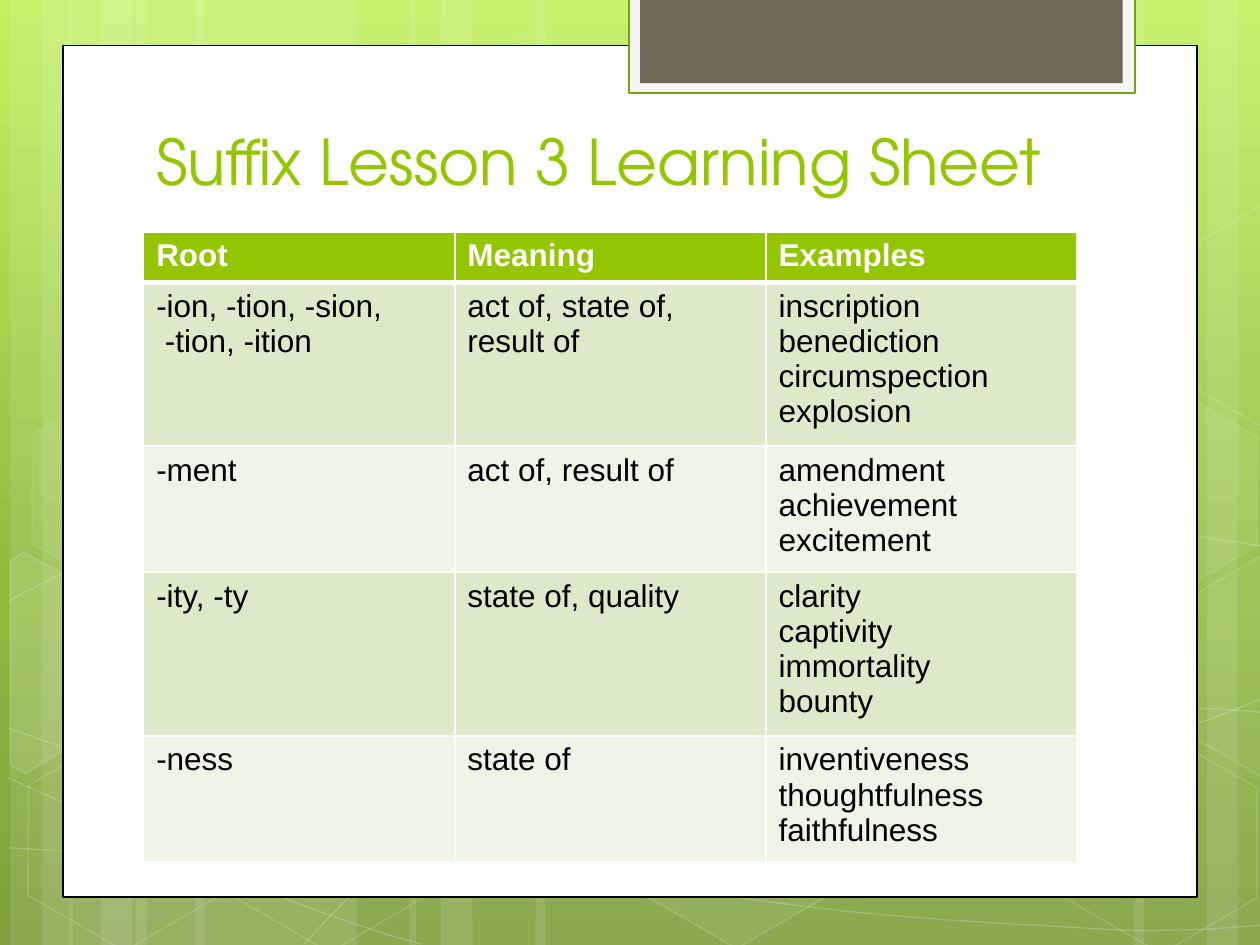
from copy import deepcopy
from typing import NamedTuple

from lxml import etree
from pptx import Presentation
from pptx.dml.color import RGBColor
from pptx.enum.shapes import MSO_SHAPE
from pptx.enum.text import MSO_ANCHOR
from pptx.oxml.ns import qn
from pptx.util import Inches, Pt

RECTANGLE, HEXAGON = MSO_SHAPE.RECTANGLE, MSO_SHAPE.HEXAGON
BOTTOM, TOP = MSO_ANCHOR.BOTTOM, MSO_ANCHOR.TOP

# The slide is a grid of 10 columns by 7.5 rows of square units.
COLUMNS, ROWS = 10, 7.5
UNIT = Inches(1)

WHITE, BLACK, LIME = "FFFFFF", "000000", "94C600"
BANDS = ("DCEACA", "EEF5E6")
BACKDROP = ((0, "C1F15E"), (0.62, "90BA3F"), (1, "7FA03E"))
TITLE_FONT, BODY_FONT = "TeX Gyre Adventor", "Arial"


class Box(NamedTuple):
    left: float
    top: float
    width: float
    height: float


class Paint(NamedTuple):
    color: str
    opacity: int = 100
    width: float = 0.75


class Hexagon(NamedTuple):
    left: float
    top: float
    fill_opacity: int
    line_opacity: int


class Lesson(NamedTuple):
    roots: str
    meaning: str
    examples: str


STRIPES = ((1.08, 1.75), (0.08, 0.5), (0.33, 0.83), (1.55, 1.75),
           (0.55, 0.5), (0.8, 0.83), (7.33, 1.75), (9.58, 0.5),
           (9, 0.83), (4.25, 3.08), (3.25, 0.5), (3.5, 0.83))

# Each wave is a start point followed by three points per Bezier segment.
WAVES = (
    ((0.07, 6.73), (0.61, 6.76), (1.15, 6.79), (1.9, 6.78), (2.65, 6.77),
     (3.58, 6.75), (4.58, 6.65), (5.58, 6.55), (7, 6.36), (7.92, 6.17),
     (8.83, 5.98), (9.77, 5.68), (10.07, 5.51)),
    ((0.07, 4.77), (0.36, 4.61), (0.65, 4.46), (1.21, 4.31), (1.78, 4.16),
     (2.59, 3.94), (3.47, 3.87), (4.36, 3.8), (5.44, 3.79), (6.54, 3.87),
     (7.64, 3.95), (9.47, 4.26), (10.07, 4.34)),
    ((0.06, 6.17), (1.27, 6.72), (2.47, 7.27), (3.34, 7.49)),
    ((0.07, 5.78), (0.38, 5.89), (0.7, 6), (1.28, 6.16), (1.86, 6.31),
     (2.73, 6.56), (3.57, 6.73), (4.4, 6.9), (5.45, 7.08), (6.28, 7.18),
     (7.11, 7.29), (8, 7.33), (8.53, 7.36), (9.05, 7.4), (9.19, 7.38),
     (9.45, 7.38), (9.71, 7.37), (9.89, 7.35), (10.07, 7.34)),
    ((2.42, 7.49), (2.6, 7.29), (2.78, 7.09), (3.02, 6.91), (3.26, 6.73),
     (3.6, 6.53), (3.88, 6.39), (4.16, 6.25), (4.33, 6.19), (4.7, 6.09),
     (5.06, 5.99), (5.73, 5.85), (6.08, 5.78), (6.44, 5.71), (6.49, 5.71),
     (6.8, 5.69), (7.11, 5.66), (7.6, 5.63), (7.94, 5.62), (8.29, 5.61),
     (8.86, 5.62), (8.86, 5.62), (9.08, 5.62), (9.31, 5.62), (9.53, 5.62),
     (9.71, 5.63), (9.88, 5.64), (9.97, 5.65), (10.06, 5.66),
     (10.03, 5.65), (10.06, 5.66)),
)

HEXAGONS = (
    Hexagon(3.34, 0.36, 4, 8), Hexagon(4.97, 5.89, 6, 12),
    Hexagon(0.11, 5.91, 0, 12), Hexagon(0.14, 3.12, 7, 8),
    Hexagon(1.74, 5.92, 0, 12), Hexagon(7.53, 4.53, 10, 12),
    Hexagon(8.34, 5.93, 0, 12), Hexagon(8.34, 3.14, 7, 8),
)

# Hexagons cut by the slide's edge, with their fill opacity.
CUT_HEXAGONS = (
    (((0.08, 4.45), (0.19, 4.38), (0.96, 4.82), (0.95, 5.7), (0.2, 6.14),
      (0.08, 6.07)), 10),
    (((9.26, 4.85), (10.01, 4.41), (10.09, 4.46), (10.09, 6.13),
      (10.02, 6.17), (9.26, 5.73)), 4),
    (((9.26, 2.07), (10.01, 1.63), (10.1, 1.68), (10.09, 3.35),
      (10.02, 3.39), (9.26, 2.95)), 0),
)

LESSONS = (
    Lesson("Root", "Meaning", "Examples"),
    Lesson("-ion, -tion, -sion,\n -tion, -ition", "act of, state of, result of",
           "inscription\nbenediction\ncircumspection\nexplosion"),
    Lesson("-ment", "act of, result of", "amendment\nachievement\nexcitement"),
    Lesson("-ity, -ty", "state of, quality",
           "clarity\ncaptivity\nimmortality\nbounty"),
    Lesson("-ness", "state of", "inventiveness\nthoughtfulness\nfaithfulness"),
)


def rgb(color: str) -> RGBColor:
    return RGBColor.from_string(color)


def units(*lengths: float) -> list[int]:
    return [round(length * UNIT) for length in lengths]


def apply_paint(fill, paint: Paint | None) -> None:
    if paint is None or paint.opacity == 0:
        fill.background()
        return
    fill.solid()
    fill.fore_color.rgb = rgb(paint.color)
    if paint.opacity < 100:
        color = fill._xPr.find(qn("a:solidFill"))[0]
        etree.SubElement(color, qn("a:alpha"), val=str(paint.opacity * 1000))


def style(shape, fill: Paint | None = None, line: Paint | None = None) -> None:
    shape.shadow.inherit = False
    apply_paint(shape.fill, fill)
    apply_paint(shape.line.fill, line)
    if line:
        shape.line.width = Pt(line.width)


def add_preset(slide, kind, box: Box, fill: Paint | None = None,
               line: Paint | None = None):
    shape = slide.shapes.add_shape(kind, *units(*box))
    style(shape, fill, line)
    return shape


def add_outline(slide, points, closed: bool, fill: Paint | None, line: Paint):
    start, *rest = [units(*point) for point in points]
    builder = slide.shapes.build_freeform(*start)
    builder.add_line_segments(rest, close=closed)
    shape = builder.convert_to_shape()
    style(shape, fill, line)
    return shape


def bend(shape) -> None:
    """Turn every three line segments into one Bezier segment."""
    segments = list(shape.element.iter(qn("a:lnTo")))
    for first in range(0, len(segments), 3):
        curve = etree.Element(qn("a:cubicBezTo"))
        segments[first].addprevious(curve)
        for segment in segments[first:first + 3]:
            curve.append(segment[0])
            segment.getparent().remove(segment)


def write(frame, text: str, *, font: str, size: float, color: str,
          bold: bool = False, anchor=TOP) -> None:
    frame.word_wrap = True
    frame.vertical_anchor = anchor
    frame.text = text
    for paragraph in frame.paragraphs:
        for run in paragraph.runs:
            run.font.name, run.font.size = font, Pt(size)
            run.font.bold, run.font.color.rgb = bold, rgb(color)


def border_cell(cell, bottom: float) -> None:
    properties = cell._tc.get_or_add_tcPr()
    sides = (("lnL", 1), ("lnR", 1), ("lnT", 1), ("lnB", bottom))
    for position, (side, width) in enumerate(sides):
        line = etree.Element(qn(f"a:{side}"), w=str(Pt(width)))
        solid = etree.SubElement(line, qn("a:solidFill"))
        etree.SubElement(solid, qn("a:srgbClr"), val=WHITE)
        properties.insert(position, line)


def add_lesson_table(slide) -> None:
    """Rows start at one line's height and grow with their text."""
    box = Box(1.14, 1.84, 3 * 2.47, 0.4 * len(LESSONS))
    table = slide.shapes.add_table(len(LESSONS), 3, *units(*box)).table
    for index, lesson in enumerate(LESSONS):
        header = index == 0
        for column, text in enumerate(lesson):
            cell = table.cell(index, column)
            apply_paint(cell.fill, Paint(LIME if header else BANDS[(index - 1) % 2]))
            border_cell(cell, bottom=3 if header else 1)
            write(cell.text_frame, text, font=BODY_FONT, size=18,
                  color=WHITE if header else BLACK, bold=header)


def paint_background(slide) -> None:
    fill = slide.background.fill
    fill.gradient()
    fill.gradient_angle = 270
    stops = next(slide.element.iter(qn("a:gsLst")))
    stops.append(deepcopy(stops[-1]))
    for stop, (position, color) in zip(fill.gradient_stops, BACKDROP):
        stop.position, stop.color.rgb = position, rgb(color)


def add_decoration(slide) -> None:
    for left, width in STRIPES:
        add_preset(slide, RECTANGLE, Box(left, 0, width, ROWS), Paint(WHITE, 10))
    for wave in WAVES:
        bend(add_outline(slide, wave, False, None, Paint(WHITE, 20)))
    for item in HEXAGONS:
        hexagon = add_preset(slide, HEXAGON, Box(item.left, item.top, 1.75, 1.52),
                             Paint(WHITE, item.fill_opacity),
                             Paint(WHITE, item.line_opacity, 1))
        hexagon.rotation = 30
        hexagon.adjustments[0] = 0.285
    for corners, opacity in CUT_HEXAGONS:
        add_outline(slide, corners, True, Paint(WHITE, opacity), Paint(WHITE, 12, 1))


def main() -> None:
    deck = Presentation()
    deck.slide_width, deck.slide_height = units(COLUMNS, ROWS)
    slide = deck.slides.add_slide(deck.slide_layouts[6])
    paint_background(slide)
    add_decoration(slide)
    add_preset(slide, RECTANGLE, Box(0.5, 0.36, 9, 6.76), Paint(WHITE), Paint(BLACK))
    add_preset(slide, RECTANGLE, Box(4.99, -0.02, 4.02, 0.76), Paint("F5F5F5"),
               Paint("74A50F", width=1.25))
    add_preset(slide, RECTANGLE, Box(5.08, -0.02, 3.83, 0.68), Paint("71685A"))
    title = slide.shapes.add_textbox(*units(1.14, 0.83, 7.68, 0.79))
    write(title.text_frame, "Suffix Lesson 3 Learning Sheet", font=TITLE_FONT,
          size=36, color=LIME, anchor=BOTTOM)
    add_lesson_table(slide)
    deck.save("out.pptx")


if __name__ == "__main__":
    main()
